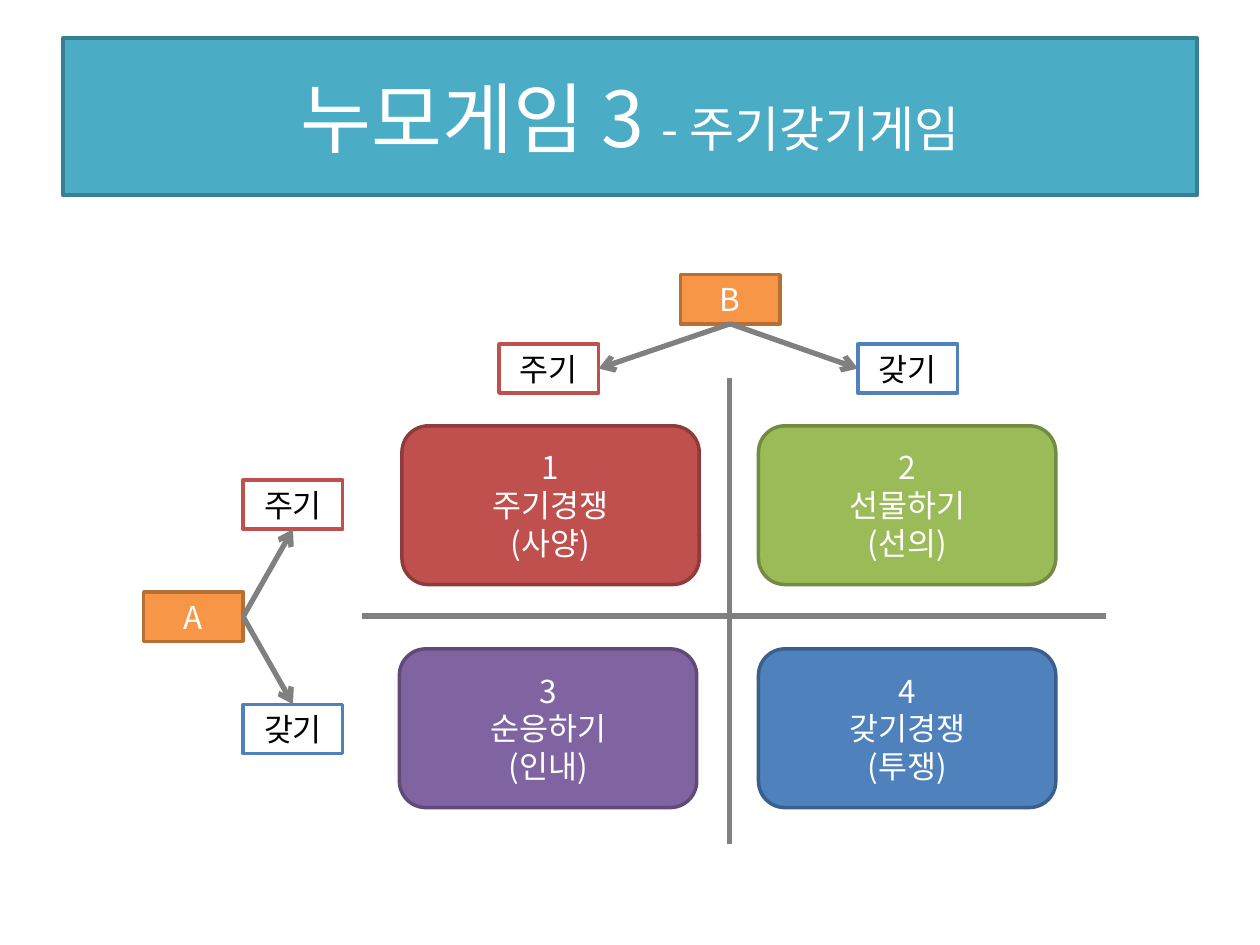
from lxml import etree
from pptx import Presentation
from pptx import util as u
from pptx.dml.color import RGBColor
from pptx.enum import shapes, text
from pptx.oxml import ns

FONT = "Noto Sans CJK KR"
WHITE, BLACK, GREY = "FFFFFF", "000000", "808080"
RED, BLUE = "C0504D", "4F81BD"
ORANGE, RUST = "F79646", "B76F34"

# Content
TITLE = [("누모게임 3 ", 44), ("- 주기갖기게임", 28)]
CARDS = [  # left, row, lines, fill, line
    (3.19, 0, ["1", "주기경쟁", "(사양)"], RED, "8E3B39"),
    (3.17, 1, ["3", "순응하기", "(인내)"], "8064A2", "5F4A78"),
    (6.02, 1, ["4", "갖기경쟁", "(투쟁)"], BLUE, "3A5F8C"),
    (6.02, 0, ["2", "선물하기", "(선의)"], "9BBB59", "738A42"),
]
ROWS = [3.38, 5.15]
CARD, TAG = (2.36, 1.26), (0.79, 0.39)
MOVES = [("주기", RED), ("갖기", BLUE)]
PLAYERS = [  # name, place, places of its moves, start site, end sites
    ("A", (1.14, 4.7), [(1.93, 3.81), (1.93, 5.59)], 3, [2, 0]),
    ("B", (5.4, 2.18), [(3.96, 2.73), (6.81, 2.73)], 2, [3, 1]),
]
AXES = [(5.79, 3, 5.79, 6.7), (2.87, 4.89, 8.78, 4.89)]


def color(code):
    return RGBColor.from_string(code)


def paint(shape, fill, line):
    shape.fill.solid()
    shape.fill.fore_color.rgb = color(fill)
    shape.line.color.rgb = color(line)
    shape.line.width = u.Pt(2)


def write(shape, paras, ink):
    frame = shape.text_frame
    form = {"word_wrap": True, "vertical_anchor": text.MSO_ANCHOR.MIDDLE,
            "auto_size": text.MSO_AUTO_SIZE.NONE}
    for key, value in form.items():
        setattr(frame, key, value)
    for i, runs in enumerate(paras):
        para = frame.add_paragraph() if i else frame.paragraphs[0]
        para.alignment = text.PP_ALIGN.CENTER
        for words, size in runs:
            run = para.add_run()
            run.text = words
            for key, value in {"name": FONT, "size": u.Pt(size)}.items():
                setattr(run.font, key, value)
            run.font.color.rgb = color(ink)
            east = etree.SubElement(run.font._element, ns.qn("a:ea"))
            east.set("typeface", FONT)


def box(kind, place, size, lines, fill, line, ink=WHITE):
    shape = slide.shapes.add_shape(kind, *map(u.Inches, place + size))
    shape.shadow.inherit = False
    paint(shape, fill, line)
    write(shape, [[(words, 18)] for words in lines], ink)
    return shape


def link(ends=(0, 0, 0, 0), arrow=False):
    line = slide.shapes.add_connector(
        shapes.MSO_CONNECTOR.STRAIGHT, *map(u.Inches, ends))
    line.line.color.rgb = color(GREY)
    line.line.width = u.Pt(3)
    if arrow:
        tip = etree.SubElement(line.line._get_or_add_ln(), ns.qn("a:tailEnd"))
        tip.set("type", "arrow")
    etree.SubElement(line._element.spPr, ns.qn("a:effectLst"))
    return line


deck = Presentation()
deck.slide_width, deck.slide_height = u.Inches(10), u.Inches(7.5)
slide = deck.slides.add_slide(deck.slide_layouts[5])
RECT = shapes.MSO_SHAPE.RECTANGLE

# Title band
title = slide.shapes.title
sides = {"left": 0.5, "top": 0.3, "width": 9, "height": 1.25}
for key, value in sides.items():
    setattr(title, key, u.Inches(value))
paint(title, "4BACC6", "377F92")
write(title, [TITLE], WHITE)

# Outcome cards
for left, row, lines, fill, line in CARDS:
    box(shapes.MSO_SHAPE.ROUNDED_RECTANGLE, (left, ROWS[row]), CARD,
        lines, fill, line)

# Axes between the cards
for ends in AXES:
    link(ends)

# Players, each joined to its two moves
for name, place, spots, start, stops in PLAYERS:
    player = box(RECT, place, TAG, [name], ORANGE, RUST)
    for (move, edge), spot, stop in zip(MOVES, spots, stops):
        tag = box(RECT, spot, TAG, [move], WHITE, edge, BLACK)
        line = link(arrow=True)
        line.begin_connect(player, start)
        line.end_connect(tag, stop)

deck.save("out.pptx")
